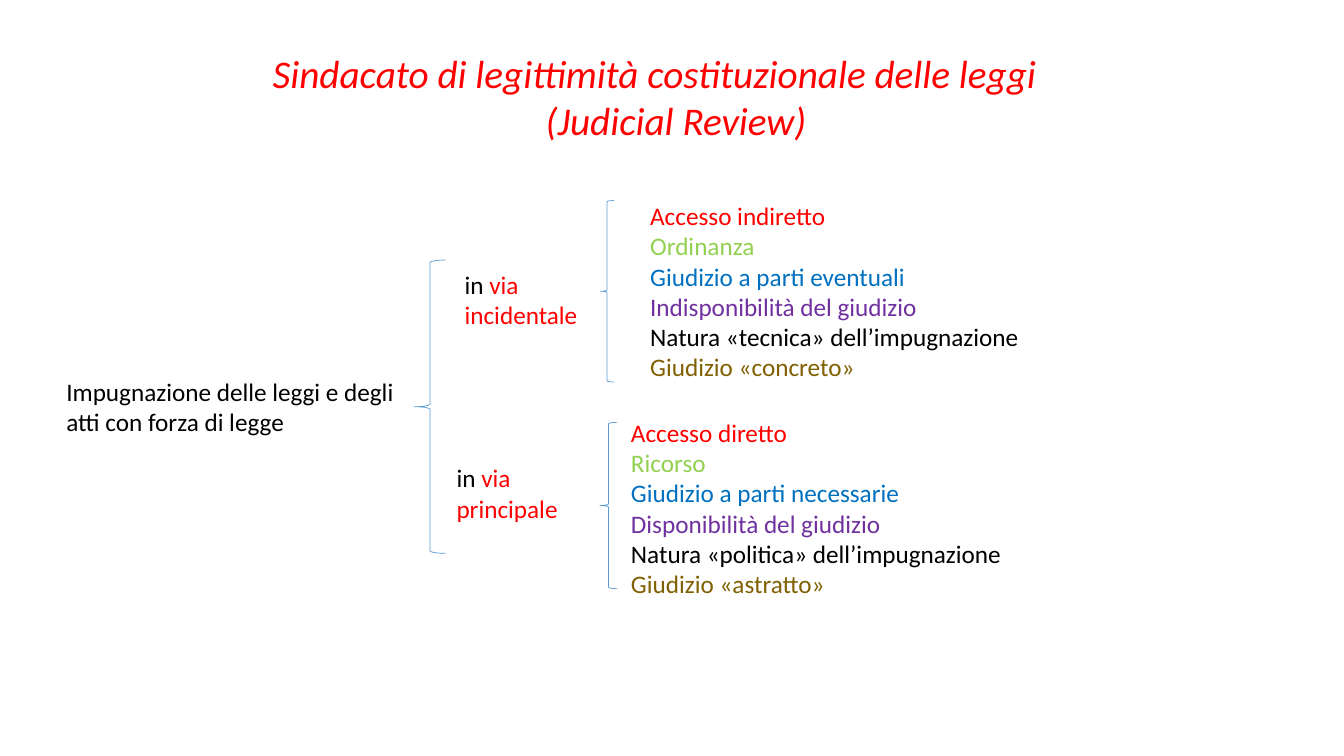
from pptx import Presentation
from pptx.dml.color import RGBColor
from pptx.enum.shapes import MSO_SHAPE as Preset
from pptx.enum.text import MSO_AUTO_SIZE as AutoSize, PP_ALIGN as Align
from pptx.util import Inches, Pt

COLORS = {
    "red": "FF0000", "green": "92D050", "blue": "0070C0", "purple": "7030A0",
    "black": "000000", "brown": "806000", "brace": "5B9BD5",
}
WIDTH, HEIGHT = 13.33, 7.5

# Each paragraph is a list of (text, colour) spans.
TITLE = [[("Sindacato di legittimità costituzionale delle leggi \t(Judicial Review)", "red")]]
ROOT = [[("Impugnazione delle leggi e degli atti con forza di legge", "black")]]
FEATURE_COLORS = ("red", "green", "blue", "purple", "black", "brown")

# Places are left, top, width, height in inches.
TITLE_PLACE = (2.49, 0.44, 8.43, 1.04)
ROOT_PLACE = (0.56, 3.68, 3.46, 0.71)
ROOT_BRACE = (4.11, 2.58, 0.31, 2.91)
BRANCHES = [
    {
        "name": "via incidentale",
        "name_place": (4.51, 2.62, 1.89, 0.71),
        "brace": (5.95, 1.99, 0.14, 1.8),
        "features": ("Accesso indiretto", "Ordinanza", "Giudizio a parti eventuali",
                     "Indisponibilità del giudizio",
                     "Natura «tecnica» dell’impugnazione", "Giudizio «concreto»"),
        "features_place": (6.35, 1.94, 4.52, 1.92),
    },
    {
        "name": "via principale",
        "name_place": (4.43, 4.54, 1.66, 0.71),
        "brace": (5.95, 4.19, 0.17, 1.65),
        "features": ("Accesso diretto", "Ricorso", "Giudizio a parti necessarie",
                     "Disponibilità del giudizio",
                     "Natura «politica» dell’impugnazione", "Giudizio «astratto»"),
        "features_place": (6.16, 4.09, 4.12, 1.92),
    },
]


def add_text(page, place, paragraphs, size=18, italic=False, align=Align.LEFT):
    box = page.shapes.add_textbox(*map(Inches, place))
    frame = box.text_frame
    frame.word_wrap = True
    frame.auto_size = AutoSize.SHAPE_TO_FIT_TEXT
    font_format = {"name": "Calibri", "size": Pt(size), "italic": italic}
    for index, spans in enumerate(paragraphs):
        para = frame.add_paragraph() if index else frame.paragraphs[0]
        para.alignment = align
        for text, color in spans:
            span = para.add_run()
            span.text = text
            for name, value in font_format.items():
                setattr(span.font, name, value)
            span.font.color.rgb = RGBColor.from_string(COLORS[color])


def add_brace(page, place):
    brace = page.shapes.add_shape(Preset.LEFT_BRACE, *map(Inches, place))
    brace.shadow.inherit = False
    brace.fill.background()
    brace.line.color.rgb = RGBColor.from_string(COLORS["brace"])
    brace.line.width = Pt(0.5)


def main():
    deck = Presentation()
    deck.slide_width, deck.slide_height = Inches(WIDTH), Inches(HEIGHT)
    page = deck.slides.add_slide(deck.slide_layouts[6])
    add_text(page, TITLE_PLACE, TITLE, size=28, italic=True, align=Align.CENTER)
    add_text(page, ROOT_PLACE, ROOT)
    add_brace(page, ROOT_BRACE)
    for branch in BRANCHES:
        add_text(page, branch["name_place"], [[("in ", "black"), (branch["name"], "red")]])
        add_brace(page, branch["brace"])
        features = [[feature] for feature in zip(branch["features"], FEATURE_COLORS)]
        add_text(page, branch["features_place"], features)
    deck.save("out.pptx")


if __name__ == "__main__":
    main()
